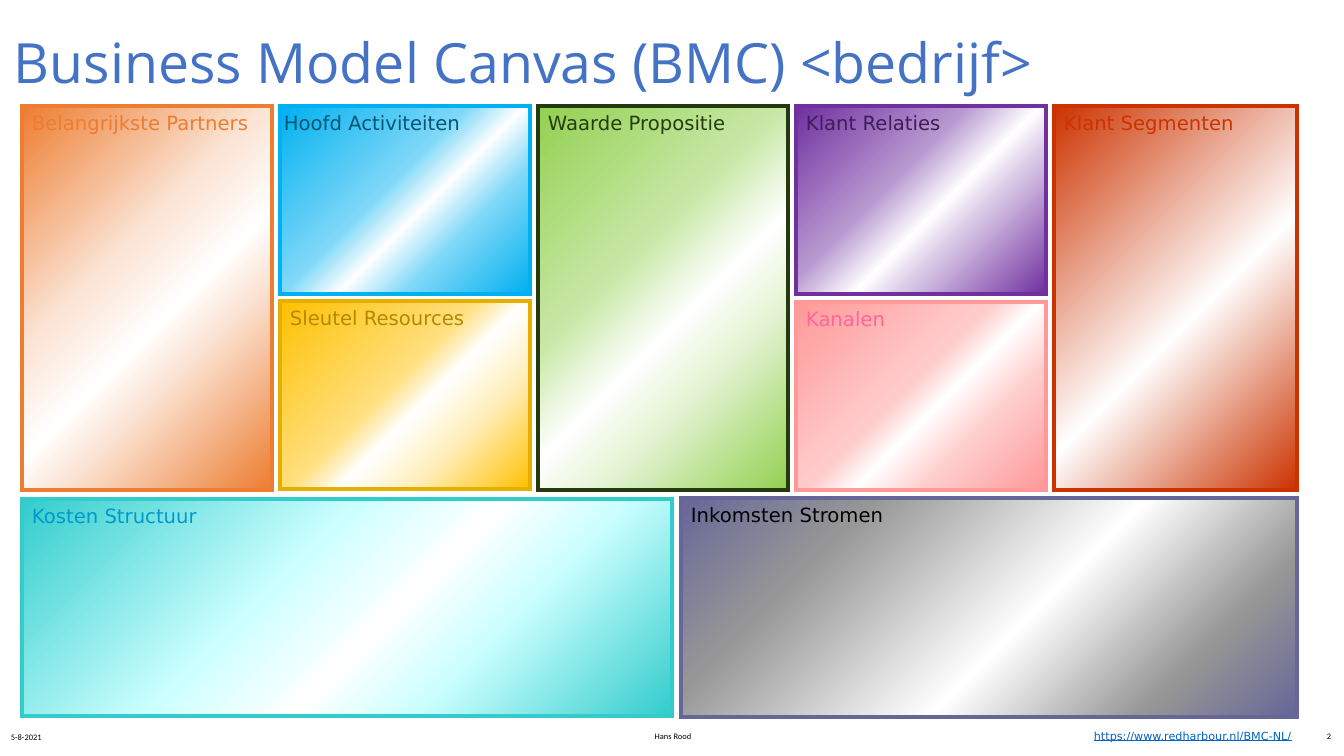
from lxml.etree import SubElement
from pptx import Presentation
from pptx.dml.color import RGBColor
from pptx.enum.shapes import MSO_SHAPE
from pptx.enum.text import MSO_ANCHOR, PP_ALIGN
from pptx.oxml.ns import qn
from pptx.util import Pt

EMU_PER_PX = 914400 / 100.8
THEME = {
    "title": ("Open Sans", 39.6, "4472C4"),
    "footer": ("Calibri", 6, "000000"),
    "link": ("DejaVu Sans", 8, "0563C1"),
    "block_font": "DejaVu Sans",
    "block_size": 14,
    "border": 3,
    "orange": ("ED7D31", "ED7D31", [(0, "ED7D31"), (39, "FBE5D6"), (56, "FFFFFF"), (66, "FBE5D6"), (100, "ED7D31")]),
    "blue": ("00B0F0", "005776", [(0, "00B0F0"), (43, "80D8F8"), (56, "FFFFFF"), (71, "80D8F8"), (100, "00B0F0")]),
    "gold": ("E6AF00", "B48900", [(0, "FFC000"), (45, "FFE080"), (56, "FFFFFF"), (72, "FFF0C0"), (100, "FFC000")]),
    "green": ("25390F", "273C10", [(0, "92D050"), (39, "C9E8A8"), (56, "FFFFFF"), (70, "E4F4D4"), (100, "92D050")]),
    "purple": ("70319F", "401C58", [(0, "7030A0"), (39, "B898D0"), (56, "FFFFFF"), (66, "DCCCE8"), (100, "7030A0")]),
    "red": ("CC3300", "CC3300", [(0, "CC3300"), (56, "FFFFFF"), (100, "CC3300")]),
    "grey": ("666699", "000000", [(0, "666699"), (23, "969696"), (56, "FFFFFF"), (81, "969696"), (100, "666699")]),
    "pink": ("FF9999", "FF6699", [(0, "FF9999"), (45, "FFCCCC"), (56, "FFFFFF"), (72, "FFCCCC"), (100, "FF9999")]),
    "teal": ("33CCCC", "0099CC", [(0, "33CCCC"), (39, "CCFFFF"), (56, "FFFFFF"), (70, "CCFFFF"), (100, "33CCCC")]),
}


def px(*lengths):
    return [round(length * EMU_PER_PX) for length in lengths]


def write(box, text, style, align=PP_ALIGN.LEFT, anchor=MSO_ANCHOR.MIDDLE):
    """Fill the box with one run in a (font, size, colour) style."""
    frame = box.text_frame
    frame.word_wrap = True
    frame.vertical_anchor = anchor
    para = frame.paragraphs[0]
    para.alignment = align
    span = para.add_run()
    span.text = text
    span.font.name, size, color = style
    span.font.size = Pt(size)
    span.font.color.rgb = RGBColor.from_string(color)
    return para


deck = Presentation()
deck.slide_width, deck.slide_height = px(1344, 756)
page = deck.slides.add_slide(deck.slide_layouts[6])

# Title and footer
title = page.shapes.add_textbox(*px(4, 5, 1123, 121))
write(title, "Business Model Canvas (BMC) <bedrijf>", THEME["title"]).line_spacing = 0.9

for text, left, top, width, align in [
    ("5-8-2021", 1, 717, 302, PP_ALIGN.LEFT),
    ("Hans Rood", 446, 716, 454, PP_ALIGN.CENTER),
    ("2", 1039, 716, 302, PP_ALIGN.RIGHT),
]:
    footer = page.shapes.add_textbox(*px(left, top, width, 40))
    write(footer, text, THEME["footer"], align)

# Canvas blocks: five columns above two wide blocks
COLUMNS = [22 + 258 * index for index in range(5)]
TOP, WIDTH, LAST_WIDTH, TALL, HALF = 106, 250, 243, 384, 188
RIGHT_EDGE = COLUMNS[4] + LAST_WIDTH
INCOME_LEFT = 681

for text, hue, left, top, width, height, inset in [
    ("Belangrijkste Partners", "orange", COLUMNS[0], TOP, WIDTH, TALL, 10),
    ("Hoofd Activiteiten", "blue", COLUMNS[1], TOP, WIDTH, HALF, 4),
    ("Sleutel Resources", "gold", COLUMNS[1], 301, WIDTH, HALF, 10),
    ("Waarde Propositie", "green", COLUMNS[2], TOP, WIDTH, TALL, 10),
    ("Klant Relaties", "purple", COLUMNS[3], TOP, WIDTH, HALF, 10),
    ("Klant Segmenten", "red", COLUMNS[4], TOP, LAST_WIDTH, TALL, 10),
    ("Inkomsten Stromen", "grey", INCOME_LEFT, 498, RIGHT_EDGE - INCOME_LEFT, 219, 10),
    ("Kanalen", "pink", COLUMNS[3], 302, WIDTH, HALF, 10),
    ("Kosten Structuur", "teal", COLUMNS[0], 499, 650, 217, 10),
]:
    border_color, text_color, stops = THEME[hue]
    block = page.shapes.add_shape(MSO_SHAPE.RECTANGLE, *px(left, top, width, height))
    block.shadow.inherit = False
    block.fill.gradient()
    block.fill.gradient_angle = 315
    stop_list = block.element.spPr.find(qn("a:gradFill")).find(qn("a:gsLst"))
    for stop in list(stop_list):
        stop_list.remove(stop)
    for percent, color in stops:
        stop = SubElement(stop_list, qn("a:gs"), pos=str(percent * 1000))
        SubElement(stop, qn("a:srgbClr"), val=color)
    block.line.color.rgb = RGBColor.from_string(border_color)
    block.line.width = Pt(THEME["border"])
    SubElement(block.element.spPr.find(qn("a:ln")), qn("a:miter"), lim="800000")
    block.text_frame.margin_left, block.text_frame.margin_right = px(inset, inset)
    style = (THEME["block_font"], THEME["block_size"], text_color)
    write(block, text, style, anchor=MSO_ANCHOR.TOP)

# Web address
address = page.shapes.add_textbox(*px(1084, 724, 229, 24))
para = write(address, "https://www.redharbour.nl/BMC-NL/", THEME["link"], anchor=MSO_ANCHOR.TOP)
para.runs[0].font.underline = True

deck.save("out.pptx")
